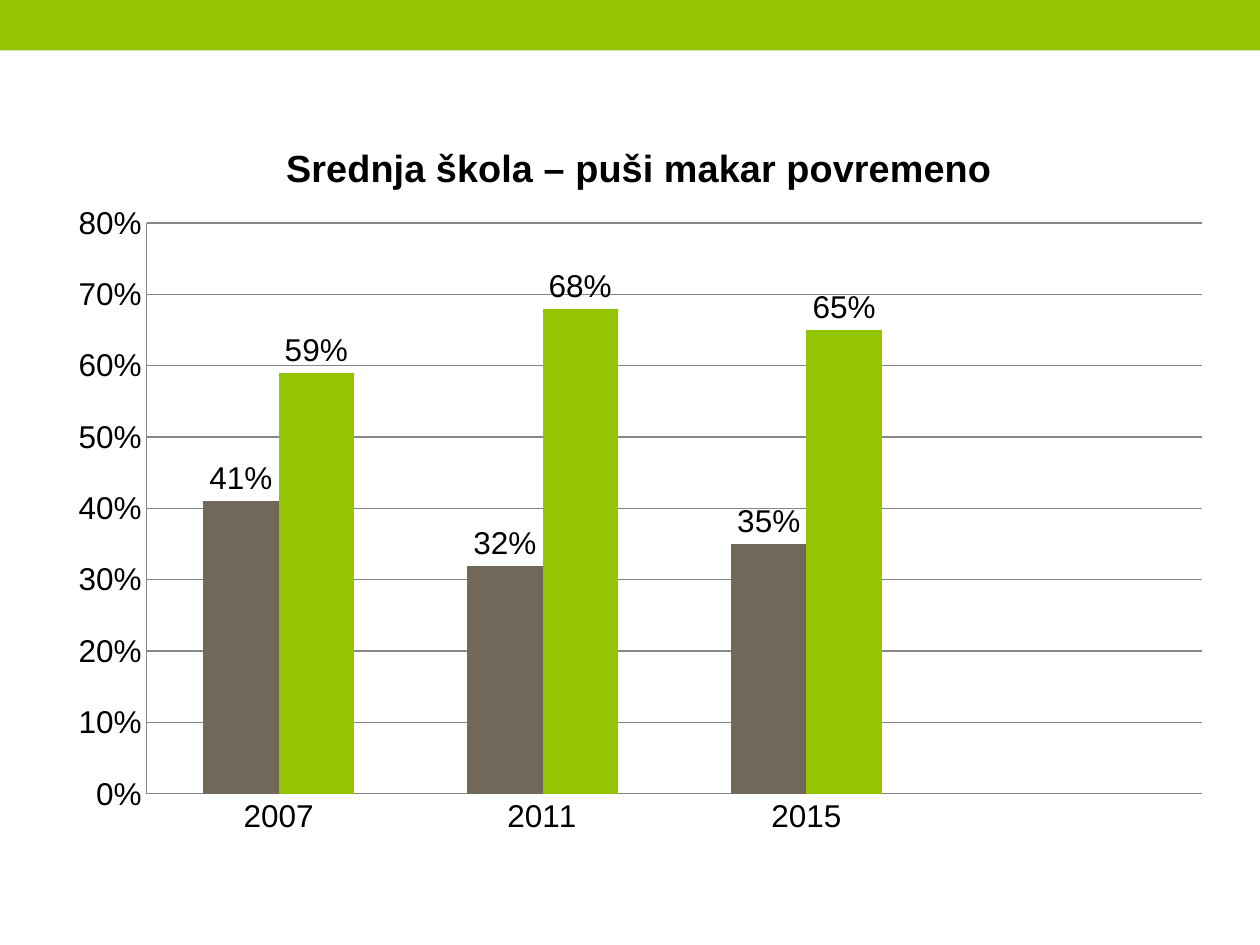
from lxml import etree
from pptx import Presentation
from pptx.chart.data import CategoryChartData
from pptx.dml.color import RGBColor
from pptx.enum import chart as kinds, shapes
from pptx.oxml import ns
from pptx.util import Inches, Pt

COLORS = {"green": "94C600", "brown": "71685A", "grid": "868686", "text": "000000"}
FONT = "Arial"
WIDTH, HEIGHT = Inches(10), Inches(7.5)
TITLE = "Srednja škola – puši makar povremeno"
YEARS = ["2007", "2011", "2015", ""]
COLUMNS = [
    ("brown", [0.41, 0.32, 0.35, None]),
    ("green", [0.59, 0.68, 0.65, None]),
]
# Percent of the chart's box taken by the inner plot area
PLOT = {"x": 7.9, "y": 14.6, "w": 90.2, "h": 77.7}


def color(name):
    return RGBColor.from_string(COLORS[name])


def share(left, top, width, height):
    """Turn percentages of the slide into a box."""
    return [int(part * side / 100) for part, side in
            zip((left, top, width, height), (WIDTH, HEIGHT) * 2)]


def style_font(font, size, bold=False):
    font.name, font.size, font.bold = FONT, Pt(size), bold
    font.color.rgb = color("text")


def style_line(line):
    line.color.rgb = color("grid")
    line.width = Pt(0.75)


def place_plot(chart):
    area = chart.element.chart.plotArea
    for old in area.findall(ns.qn("c:layout")):
        area.remove(old)
    layout = etree.Element(ns.qn("c:layout"))
    manual = etree.SubElement(layout, ns.qn("c:manualLayout"))
    settings = {"layoutTarget": "inner", "xMode": "edge", "yMode": "edge"}
    settings.update((side, part / 100) for side, part in PLOT.items())
    for tag, value in settings.items():
        etree.SubElement(manual, ns.qn(f"c:{tag}")).set("val", str(value))
    area.insert(0, layout)


def add_band(page, box):
    band = page.shapes.add_shape(shapes.MSO_SHAPE.RECTANGLE, *box)
    band.shadow.inherit = False
    band.fill.solid()
    band.fill.fore_color.rgb = color("green")
    band.line.fill.background()


def add_smoking_chart(page, box):
    data = CategoryChartData(number_format="0%")
    data.categories = YEARS
    for _, values in COLUMNS:
        data.add_series("", values)
    chart = page.shapes.add_chart(
        kinds.XL_CHART_TYPE.COLUMN_CLUSTERED, *box, data).chart
    style_font(chart.font, 18)
    chart.has_legend = False
    place_plot(chart)

    # Title
    chart.has_title = True
    chart.chart_title.include_in_layout = False
    span = chart.chart_title.text_frame.paragraphs[0].add_run()
    span.text = TITLE
    style_font(span.font, 21.6, bold=True)

    # Axes
    for axis in (chart.category_axis, chart.value_axis):
        axis.major_tick_mark = axis.minor_tick_mark = kinds.XL_TICK_MARK.NONE
        style_line(axis.format.line)
    scale = chart.value_axis
    scale.minimum_scale, scale.maximum_scale, scale.major_unit = 0, 0.8, 0.1
    scale.has_major_gridlines = True
    style_line(scale.major_gridlines.format.line)
    scale.tick_labels.number_format = "0%"
    scale.tick_labels.number_format_is_linked = False

    # Columns and their labels
    plot = chart.plots[0]
    plot.gap_width, plot.overlap = 150, 0
    plot.vary_by_categories = False
    for series, (fill, _) in zip(plot.series, COLUMNS):
        series.format.fill.solid()
        series.format.fill.fore_color.rgb = color(fill)
        labels = series.data_labels
        labels.show_value = True
        labels.number_format, labels.number_format_is_linked = "0%", False
        labels.position = kinds.XL_LABEL_POSITION.OUTSIDE_END
        style_font(labels.font, 18)


def main():
    deck = Presentation()
    deck.slide_width, deck.slide_height = WIDTH, HEIGHT
    page = deck.slides.add_slide(deck.slide_layouts[6])
    add_band(page, share(0, 0, 100, 5.33))
    add_smoking_chart(page, share(4.3, 12.27, 92.9, 77.73))
    deck.save("out.pptx")


if __name__ == "__main__":
    main()
